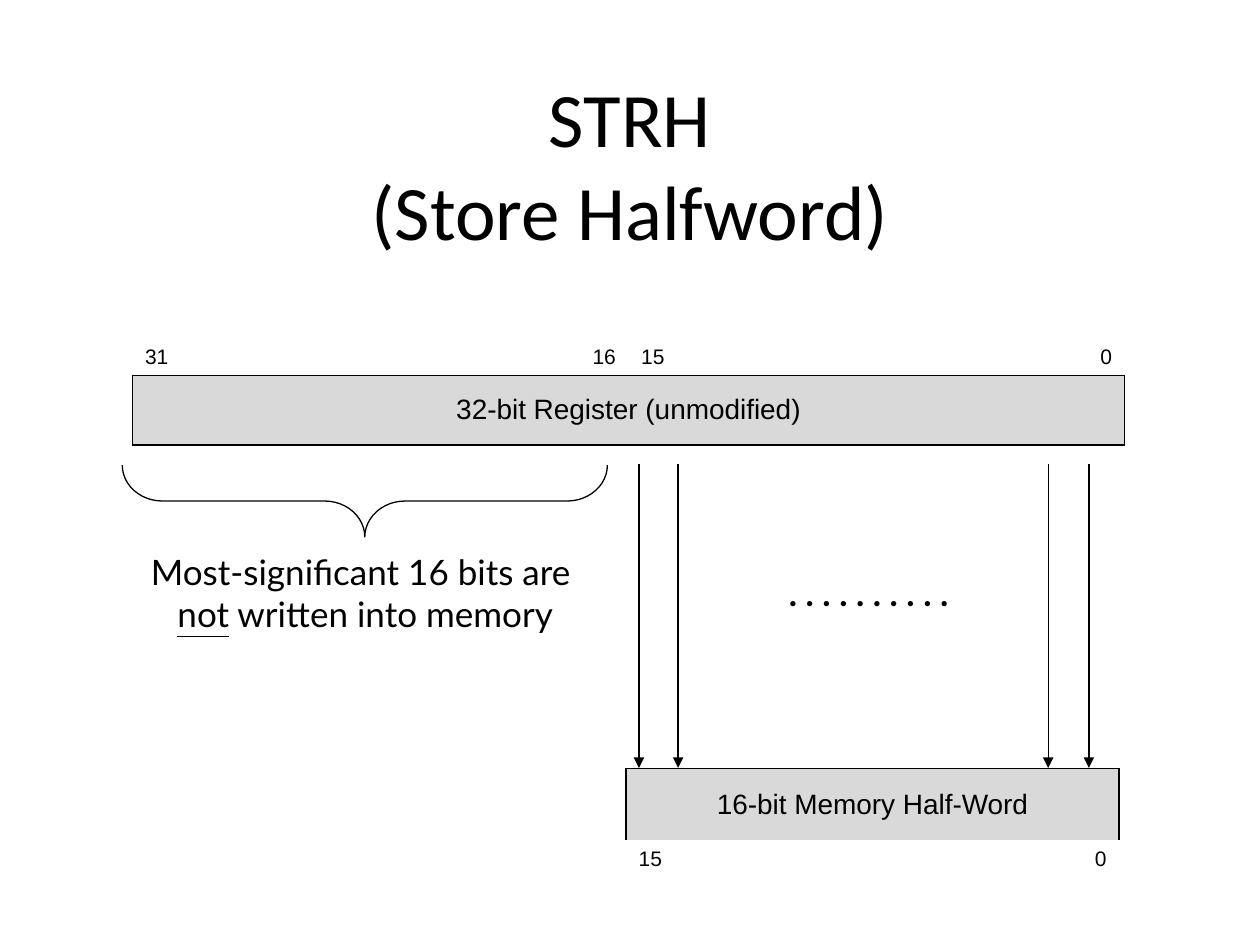
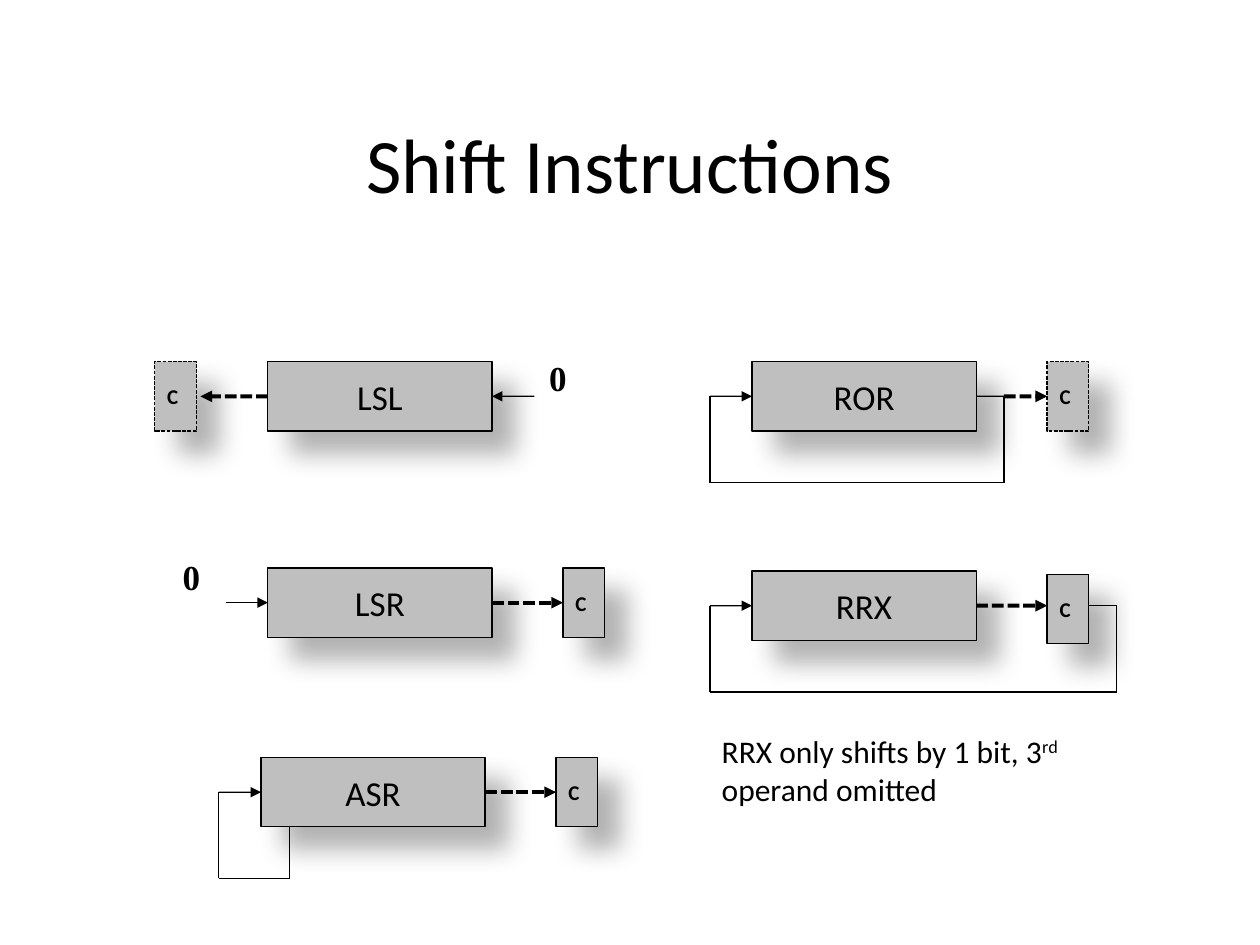
from collections import namedtuple
from dataclasses import dataclass
from itertools import pairwise

from lxml.etree import SubElement
from pptx import Presentation
from pptx.dml.color import RGBColor
from pptx.enum.dml import MSO_LINE
from pptx.enum.shapes import MSO_CONNECTOR, MSO_SHAPE
from pptx.enum.text import MSO_ANCHOR as ANCHOR, PP_ALIGN as ALIGN
from pptx.oxml.ns import qn
from pptx.util import Cm, Pt

TOP, LEFT, BOTTOM, RIGHT = range(4)
Site = namedtuple("Site", "shape side")


@dataclass(frozen=True)
class Theme:
    """Colours, fonts and sizes shared by the slides."""
    ink: str = "000000"
    paper: str = "FFFFFF"
    word: str = "D9D9D9"
    register: str = "BFBFBF"
    body: str = "Calibri"
    note: str = "Lato"
    table: str = "Arial"
    digit: str = "Times New Roman"
    title_size: int = 44
    label_size: int = 20
    remark_size: int = 18
    word_size: int = 16
    bit_size: int = 12
    thin: float = 0.75
    border: float = 1
    thick: float = 2.25


THEME = Theme()


def write(frame, content, font=THEME.body, size=THEME.label_size, bold=False,
          align=ALIGN.LEFT, anchor=ANCHOR.TOP):
    """Write a string, or (text, format) parts, into a text frame."""
    frame.vertical_anchor = anchor
    paragraph = frame.paragraphs[0]
    paragraph.alignment = align
    parts = [(content, {})] if isinstance(content, str) else content
    for text, extra in parts:
        for index, piece in enumerate(text.split("\n")):
            if index:
                paragraph.add_line_break()
            if not piece:
                continue
            run = paragraph.add_run()
            run.text = piece
            run.font.name, run.font.size, run.font.bold = font, Pt(size), bold
            run.font.color.rgb = RGBColor.from_string(THEME.ink)
            if extra.get("underline"):
                run.font.underline = True
            if "raised" in extra:
                run._r.get_or_add_rPr().set("baseline", str(extra["raised"] * 1000))


class Deck:
    """Holds the theme and the slide being filled."""

    def __init__(self, theme):
        """Start an empty 4:3 presentation."""
        self.theme = theme
        self.file = Presentation()
        self.file.slide_width, self.file.slide_height = Cm(25.4), Cm(19.05)

    def slide(self, title):
        """Open a new slide with its title."""
        self.shapes = self.file.slides.add_slide(self.file.slide_layouts[6]).shapes
        self.text(title, 1.9, 1.7, 21.6, 3.18, size=self.theme.title_size,
                  align=ALIGN.CENTER, anchor=ANCHOR.MIDDLE)

    def text(self, content, x, y, width, height, **style):
        """Place wrapped text."""
        frame = self.shapes.add_textbox(Cm(x), Cm(y), Cm(width), Cm(height)).text_frame
        frame.word_wrap = True
        write(frame, content, **style)

    def stroke(self, line, width, dashed=False):
        """Style an outline or a connector."""
        line.color.rgb = RGBColor.from_string(self.theme.ink)
        line.width = Pt(width)
        if dashed:
            line.dash_style = MSO_LINE.SQUARE_DOT

    def box(self, label, x, y, width, height, dashed=False, **style):
        """Draw a labelled grey box with a soft shadow."""
        box = self.shapes.add_shape(MSO_SHAPE.RECTANGLE, Cm(x), Cm(y), Cm(width), Cm(height))
        box.fill.solid()
        box.fill.fore_color.rgb = RGBColor.from_string(self.theme.register)
        self.stroke(box.line, self.theme.thin, dashed)
        box.shadow.inherit = False
        effects = box._element.spPr.find(qn("a:effectLst"))
        shadow = SubElement(effects, qn("a:outerShdw"), blurRad=str(Pt(15)),
                            dist=str(Pt(18)), dir=str(45 * 60000), rotWithShape="0")
        color = SubElement(shadow, qn("a:srgbClr"), val=self.theme.ink)
        SubElement(color, qn("a:alpha"), val="30000")
        box.text_frame.word_wrap = False
        write(box.text_frame, label, anchor=ANCHOR.MIDDLE, **style)
        return box

    def brace(self, x, y, width, height):
        """Draw a brace that opens upwards."""
        brace = self.shapes.add_shape(MSO_SHAPE.LEFT_BRACE, Cm(x), Cm(y), Cm(width), Cm(height))
        brace.rotation = 270
        brace.adjustments[0] = 0.56
        brace.fill.background()
        brace.shadow.inherit = False
        self.stroke(brace.line, self.theme.thin)

    def line(self, start, end, arrow=True, dashed=False):
        """Draw a line between points or sites; dashed lines are thick."""
        ends = [(0, 0) if isinstance(end_, Site) else end_ for end_ in (start, end)]
        link = self.shapes.add_connector(
            MSO_CONNECTOR.STRAIGHT, *(Cm(value) for point in ends for value in point))
        if isinstance(start, Site):
            link.begin_connect(*start)
        if isinstance(end, Site):
            link.end_connect(*end)
        self.stroke(link.line, self.theme.thick if dashed else self.theme.thin, dashed)
        if arrow:
            SubElement(link.line._get_or_add_ln(), qn("a:tailEnd"), type="triangle")
        SubElement(link._element.spPr, qn("a:effectLst"))

    def route(self, *stops):
        """Draw a chain of lines with an arrowhead at its end."""
        for index, (start, end) in enumerate(pairwise(stops), 2):
            self.line(start, end, arrow=index == len(stops))

    def table(self, x, y, column, row, word, word_row, bits, bits_anchor):
        """Draw a bordered word with a row of bit numbers beside it."""
        count = len(bits)
        table = self.shapes.add_table(2, count, Cm(x), Cm(y),
                                      Cm(column * count), Cm(row * 2)).table
        table.first_row = table.horz_banding = False
        for line in table.rows:
            line.height = Cm(row)
        for index, (bit, align) in enumerate(bits):
            table.columns[index].width = Cm(column)
            self.cell(table.cell(1 - word_row, index), self.theme.paper)
            self.cell(table.cell(word_row, index), self.theme.word, "LRTB")
            if bit:
                number = table.cell(1 - word_row, index)
                number.vertical_anchor = bits_anchor
                write(number.text_frame, bit, font=self.theme.table,
                      size=self.theme.bit_size, align=align, anchor=bits_anchor)
        table.cell(word_row, 0).merge(table.cell(word_row, count - 1))
        table.cell(word_row, 0).vertical_anchor = ANCHOR.MIDDLE
        write(table.cell(word_row, 0).text_frame, word, font=self.theme.table,
              size=self.theme.word_size, align=ALIGN.CENTER, anchor=None)

    def cell(self, cell, fill, sides=""):
        """Fill a cell and draw the named borders."""
        cell.fill.solid()
        cell.fill.fore_color.rgb = RGBColor.from_string(fill)
        properties = cell._tc.get_or_add_tcPr()
        for index, side in enumerate(sides):
            border = SubElement(properties, qn(f"a:ln{side}"), w=str(Pt(self.theme.border)))
            paint = SubElement(border, qn("a:solidFill"))
            SubElement(paint, qn("a:srgbClr"), val=self.theme.ink)
            properties.insert(index, border)


def store_halfword(deck):
    """Build the STRH slide."""
    theme = deck.theme
    deck.slide("STRH\n(Store Halfword)")
    blank = ("", ALIGN.LEFT)
    high = [("31", ALIGN.LEFT), blank, blank, ("16", ALIGN.RIGHT)]
    low = [("15", ALIGN.LEFT), ("0", ALIGN.RIGHT)]
    deck.table(2.67, 6.17, 2.5, 1.4, "32-bit Register (unmodified)", 1,
               [*high, low[0], blank, blank, low[1]], ANCHOR.BOTTOM)
    deck.table(12.62, 15.49, 4.97, 1.46, "16-bit Memory Half-Word", 0, low, ANCHOR.TOP)
    for bit_x in (12.88, 13.67, 21.13, 21.95):
        deck.line((bit_x, 9.36), (bit_x, 15.48))
    deck.text(". . . . . . . . . .", 14.53, 11.4, 5.97, 1.09, font=theme.note,
              bold=True, align=ALIGN.CENTER)
    deck.brace(6.63, 5.21, 1.45, 9.78)
    deck.text([("Most-significant 16 bits are \n", {}), ("not", {"underline": True}),
               (" written into memory", {})],
              2.08, 10.97, 10.57, 1.96, font=theme.note, align=ALIGN.CENTER)


def shift_instructions(deck):
    """Build the slide of shift diagrams."""
    theme = deck.theme
    width, height, carry_width = 4.52, 1.4, 0.84
    carry_gap, lead, loop_drop = 1.43, 0.85, 1.74
    deck.slide("Shift Instructions")

    def instruction(name, x, y, carry_x=None, carry_drop=0, optional=False):
        """Draw a register and its carry bit."""
        register = deck.box(name, x, y, width, height, align=ALIGN.CENTER)
        carry_x = x + width + carry_gap if carry_x is None else carry_x
        carry = deck.box("C", carry_x, y + carry_drop, carry_width, height, optional,
                         size=theme.bit_size, bold=True)
        return register, carry

    def zero(x, y):
        """Write the bit that is shifted in."""
        deck.text("0", x, y, 1.42, 1.8, font=theme.digit, bold=True)

    def loop(register, x, middle, *start):
        """Lead the bit below the register and back to its left side."""
        floor = middle + loop_drop
        deck.route(*start, (start[-1][0], floor), (x - lead, floor),
                   (x - lead, middle), Site(register, LEFT))

    left, right, top, centre, bottom = 5.4, 15.16, 7.29, 11.45, 15.27

    lsl, _ = instruction("LSL", left, top, carry_x=3.12, optional=True)
    deck.line(Site(lsl, LEFT), (4.04, top + height / 2), dashed=True)
    deck.line((left + width + lead, top + height / 2), Site(lsl, RIGHT))
    zero(10.82, 7.06)

    lsr, carry = instruction("LSR", left, centre)
    deck.line(Site(lsr, RIGHT), Site(carry, LEFT), dashed=True)
    deck.line((left - lead, centre + height / 2), Site(lsr, LEFT))
    zero(3.43, 11.07)

    asr_x = left - 0.14
    asr, carry = instruction("ASR", asr_x, bottom)
    deck.line(Site(asr, RIGHT), Site(carry, LEFT), dashed=True)
    loop(asr, asr_x, bottom + height / 2, (asr_x + 0.58, bottom + height))

    ror, carry = instruction("ROR", right, top, optional=True)
    middle = top + height / 2
    fork = (right + width + 0.56, middle)
    deck.line(fork, Site(carry, LEFT), dashed=True)
    loop(ror, right, middle, Site(ror, RIGHT), fork)

    rrx, carry = instruction("RRX", right, centre + 0.06, carry_drop=0.07)
    middle = centre + 0.06 + height / 2
    carry_x = right + width + carry_gap
    deck.line(Site(rrx, RIGHT), (carry_x, middle), dashed=True)
    loop(rrx, right, middle, (carry_x + carry_width, middle),
         (carry_x + carry_width + 0.56, middle))
    deck.text([("RRX only shifts by 1 bit, 3", {}), ("rd", {"raised": 30}),
               (" operand omitted", {})],
              14.3, 14.63, 8.97, 2.95, size=theme.remark_size)


def main():
    """Build and save the deck."""
    deck = Deck(THEME)
    store_halfword(deck)
    shift_instructions(deck)
    deck.file.save("out.pptx")


if __name__ == "__main__":
    main()
